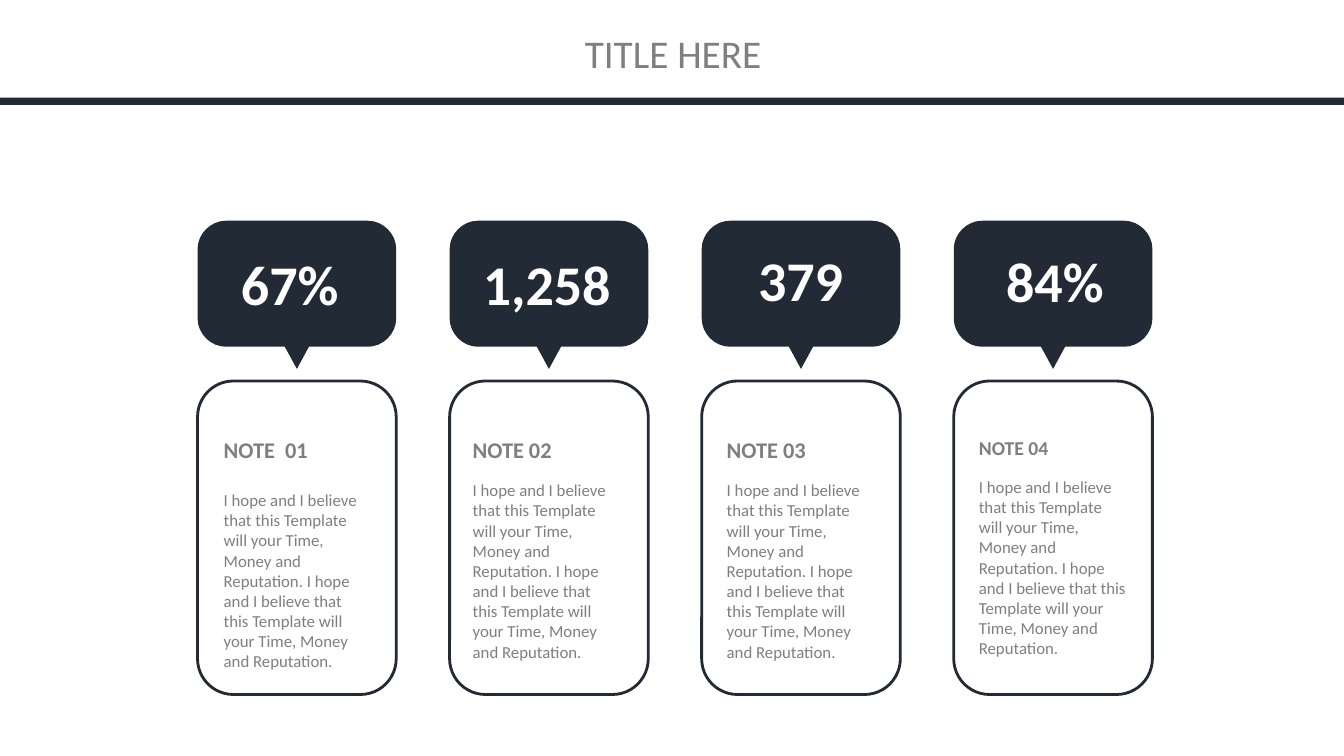
from pptx import Presentation
from pptx.dml.color import RGBColor
from pptx.enum.shapes import MSO_SHAPE
from pptx.enum.text import MSO_ANCHOR, MSO_AUTO_SIZE, PP_ALIGN
from pptx.oxml.ns import qn
from pptx.util import Inches, Pt

RECTANGLE = MSO_SHAPE.RECTANGLE
ROUNDED = MSO_SHAPE.ROUNDED_RECTANGLE
TOP, MIDDLE = MSO_ANCHOR.TOP, MSO_ANCHOR.MIDDLE
LEFT, CENTER = PP_ALIGN.LEFT, PP_ALIGN.CENTER
NO_AUTOFIT, GROW = MSO_AUTO_SIZE.NONE, MSO_AUTO_SIZE.SHAPE_TO_FIT_TEXT

COLORS = {"navy": "222A35", "gray": "7F7F7F", "white": "FFFFFF"}
FONT = "Calibri"

# Column grid, in inches
FIRST_LEFT, PITCH, COLUMN_WIDTH, COLUMN_COUNT = 1.96, 2.5, 1.97, 4
BUBBLE_TOP, BUBBLE_BOTTOM, POINTER_TIP = 2.19, 3.44, 3.66
CORNER_RADIUS, CORNER_HANDLE, POINTER_HALF = 0.28, 0.15, 0.12
CARD_TOP, CARD_HEIGHT = 3.78, 3.11
NOTE_TOP = 4.28

BODY = ("I hope and I believe that this Template will your Time, Money and "
        "Reputation. I hope and I believe that this Template will your Time, "
        "Money and Reputation.")

# heading, heading size, gap below in points, left, width, height
NOTES = [
    ("NOTE  01", 16, 19, 2.12, 1.61, 2.46),
    ("NOTE 02", 16, 12, 4.59, 1.57, 2.36),
    ("NOTE 03", 16, 12, 7.11, 1.56, 2.36),
    ("NOTE 04", 14, 12, 9.61, 1.68, 2.32),
]

# figure, left, top, width, left inset
FIGURES = [
    ("67%", 1.67, 2.43, 1.81, 0.72),
    ("1,258", 4.69, 2.43, 1.47, 0.1),
    ("379", 7.42, 2.39, 1.05, 0.1),
    ("84%", 9.88, 2.4, 1.18, 0.1),
]


def rgb(name):
    return RGBColor.from_string(COLORS[name])


def write(paragraph, text, size=12, color="gray", bold=False, align=LEFT,
          space_before=0):
    """Fill one paragraph with formatted text."""
    paragraph.text = text
    paragraph.alignment = align
    if space_before:
        paragraph.space_before = Pt(space_before)
    font = paragraph.font
    font.name, font.size, font.bold = FONT, Pt(size), bold
    font.color.rgb = rgb(color)


def add_text_frame(slide, left, top, width, height):
    frame = slide.shapes.add_textbox(
        Inches(left), Inches(top), Inches(width), Inches(height)).text_frame
    frame.word_wrap = True
    frame.auto_size = GROW
    frame.vertical_anchor = TOP
    return frame


def paint_navy(shape):
    shape.shadow.inherit = False
    shape.fill.solid()
    shape.fill.fore_color.rgb = rgb("navy")
    shape.line.fill.background()


def add_title(slide, text):
    title = slide.shapes.title
    title.left, title.top = Inches(4.85), Inches(0.29)
    title.width, title.height = Inches(3.65), Inches(0.47)
    frame = title.text_frame
    frame.margin_left = frame.margin_right = 0
    frame.margin_top = frame.margin_bottom = 0
    frame.auto_size = NO_AUTOFIT
    frame.vertical_anchor = MIDDLE
    write(frame.paragraphs[0], text, size=28, align=CENTER)


def add_title_bar(slide, slide_width):
    paint_navy(slide.shapes.add_shape(
        RECTANGLE, 0, Inches(0.97), slide_width, Inches(0.07)))


def add_bubble(slide, left):
    """Rounded box with a pointer in the middle of its lower edge."""
    right, middle = left + COLUMN_WIDTH, left + COLUMN_WIDTH / 2
    top, bottom = BUBBLE_TOP, BUBBLE_BOTTOM
    radius, handle = CORNER_RADIUS, CORNER_RADIUS - CORNER_HANDLE
    # One line end, or the two handles and the end of a corner curve
    segments = [
        [(right - radius, top)],
        [(right - handle, top), (right, top + handle), (right, top + radius)],
        [(right, bottom - radius)],
        [(right, bottom - handle), (right - handle, bottom),
         (right - radius, bottom)],
        [(middle + POINTER_HALF, bottom)],
        [(middle, POINTER_TIP)],
        [(middle - POINTER_HALF, bottom)],
        [(left + radius, bottom)],
        [(left + handle, bottom), (left, bottom - handle),
         (left, bottom - radius)],
        [(left, top + radius)],
        [(left, top + handle), (left + handle, top), (left + radius, top)],
    ]
    builder = slide.shapes.build_freeform(Inches(left + radius), Inches(top))
    builder.add_line_segments(
        [(Inches(x), Inches(y)) for segment in segments for x, y in segment],
        close=True)
    bubble = builder.convert_to_shape()
    paint_navy(bubble)

    # Join the three points of each corner into one curve
    lines = iter(list(bubble.element.iter(qn("a:lnTo"))))
    for segment in segments:
        first, *others = [next(lines) for _ in segment]
        for line in others:
            first.append(line[0])
            line.getparent().remove(line)
        if others:
            first.tag = qn("a:cubicBezTo")


def add_card(slide, left):
    card = slide.shapes.add_shape(
        ROUNDED, Inches(left), Inches(CARD_TOP),
        Inches(COLUMN_WIDTH), Inches(CARD_HEIGHT))
    card.adjustments[0] = 0.18
    card.shadow.inherit = False
    card.fill.background()
    card.line.color.rgb = rgb("navy")
    card.line.width = Pt(2)


def add_note(slide, heading, heading_size, gap, left, width, height):
    frame = add_text_frame(slide, left, NOTE_TOP, width, height)
    write(frame.paragraphs[0], heading, size=heading_size, bold=True)
    write(frame.add_paragraph(), BODY, space_before=gap)


def add_figure(slide, figure, left, top, width, inset):
    frame = add_text_frame(slide, left, top, width, 0.77)
    frame.margin_left = Inches(inset)
    write(frame.paragraphs[0], figure, size=40, color="white", bold=True)


def main():
    deck = Presentation()
    deck.slide_width, deck.slide_height = Inches(13.33), Inches(7.5)
    slide = deck.slides.add_slide(deck.slide_layouts[5])

    # Header
    add_title(slide, "TITLE HERE")
    add_title_bar(slide, deck.slide_width)

    # Bubble and card of each column
    for column in range(COLUMN_COUNT):
        left = FIRST_LEFT + column * PITCH
        add_bubble(slide, left)
        add_card(slide, left)

    # Texts on the cards and bubbles
    for note in NOTES:
        add_note(slide, *note)
    for figure in FIGURES:
        add_figure(slide, *figure)

    deck.save("out.pptx")


if __name__ == "__main__":
    main()
